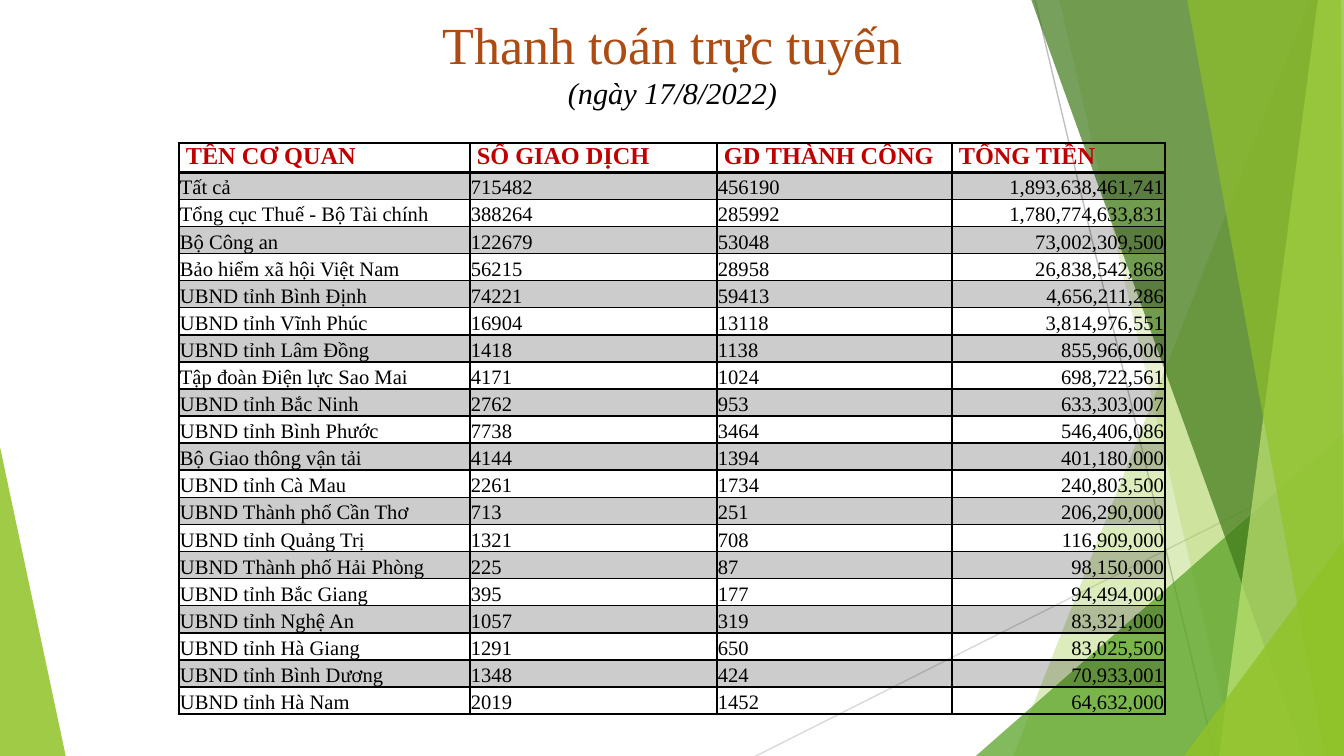
from dataclasses import dataclass

from lxml.etree import SubElement
from pptx import Presentation
from pptx.dml.color import RGBColor
from pptx.enum.shapes import MSO_CONNECTOR
from pptx.enum.text import MSO_ANCHOR, PP_ALIGN
from pptx.oxml.ns import qn
from pptx.util import Emu, Pt

EMU_PER_PX = 914400 / 134.4
FONT = "Times New Roman"
COLORS = {
    "lime": "90C226",
    "green": "54A021",
    "forest": "3F7819",
    "pale": "C0E474",
    "light_line": "D9D9D9",
    "gray_line": "BFBFBF",
    "title": "AD4C12",
    "header": "C00000",
    "black": "000000",
}


@dataclass(frozen=True)
class Facet:
    color: str
    opacity: int
    points: tuple[tuple[int, int], ...]


@dataclass(frozen=True)
class Ray:
    color: str
    start: tuple[int, int]
    end: tuple[int, int]


@dataclass(frozen=True)
class Agency:
    name: str
    transactions: str
    successful: str
    amount: str


LEFT_FACET = Facet("lime", 85, ((-1, 442), (66, 757), (-1, 756)))
RAYS = (
    Ray("light_line", (754, 757), (1345, 460)),
    Ray("gray_line", (1035, 0), (1215, 756)),
)
RIGHT_FACETS = (
    Facet("lime", 30, ((1310, 0), (1013, 757), (1347, 757), (1345, 1))),
    Facet("lime", 20, ((1059, -1), (1235, 756), (1345, 756), (1345, -1))),
    Facet("green", 72, ((976, 756), (1344, 433), (1345, 756))),
    Facet("forest", 70, ((1031, -1), (1304, 756), (1345, 756), (1345, -1))),
    Facet("pale", 70, ((1318, -1), (1219, 756), (1345, 756), (1344, -1))),
    Facet("lime", 65, ((1187, -1), (1325, 756), (1344, 756), (1341, -1))),
    Facet("lime", 80, ((1184, 756), (1345, 539), (1345, 756))),
)
COLUMN_WIDTHS = (291, 247, 235, 213)
TABLE_HEIGHT = 570
HEADINGS = ("TÊN CƠ QUAN", "SỐ GIAO DỊCH", "GD THÀNH CÔNG", "TỔNG TIỀN")
AGENCIES = (
    Agency("Tất cả", "715482", "456190", "1,893,638,461,741"),
    Agency("Tổng cục Thuế - Bộ Tài chính", "388264", "285992", "1,780,774,633,831"),
    Agency("Bộ Công an", "122679", "53048", "73,002,309,500"),
    Agency("Bảo hiểm xã hội Việt Nam", "56215", "28958", "26,838,542,868"),
    Agency("UBND tỉnh Bình Định", "74221", "59413", "4,656,211,286"),
    Agency("UBND tỉnh Vĩnh Phúc", "16904", "13118", "3,814,976,551"),
    Agency("UBND tỉnh Lâm Đồng", "1418", "1138", "855,966,000"),
    Agency("Tập đoàn Điện lực Sao Mai", "4171", "1024", "698,722,561"),
    Agency("UBND tỉnh Bắc Ninh", "2762", "953", "633,303,007"),
    Agency("UBND tỉnh Bình Phước", "7738", "3464", "546,406,086"),
    Agency("Bộ Giao thông vận tải", "4144", "1394", "401,180,000"),
    Agency("UBND tỉnh Cà Mau", "2261", "1734", "240,803,500"),
    Agency("UBND Thành phố Cần Thơ", "713", "251", "206,290,000"),
    Agency("UBND tỉnh Quảng Trị", "1321", "708", "116,909,000"),
    Agency("UBND Thành phố Hải Phòng", "225", "87", "98,150,000"),
    Agency("UBND tỉnh Bắc Giang", "395", "177", "94,494,000"),
    Agency("UBND tỉnh Nghệ An", "1057", "319", "83,321,000"),
    Agency("UBND tỉnh Hà Giang", "1291", "650", "83,025,500"),
    Agency("UBND tỉnh Bình Dương", "1348", "424", "70,933,001"),
    Agency("UBND tỉnh Hà Nam", "2019", "1452", "64,632,000"),
)


def px(length: int) -> Emu:
    return Emu(round(length * EMU_PER_PX))


def rgb(name: str) -> RGBColor:
    return RGBColor.from_string(COLORS[name])


def write(para, text: str, *, size: float, color: str = "black", bold: bool = False,
          italic: bool = False, align: PP_ALIGN = PP_ALIGN.LEFT) -> None:
    para.alignment = align
    span = para.add_run()
    span.text = text
    span.font.name = FONT
    span.font.size = Pt(size)
    span.font.bold = bold
    span.font.italic = italic
    span.font.color.rgb = rgb(color)


def fill_translucent(target, properties, color: str, opacity: int) -> None:
    target.fill.solid()
    target.fill.fore_color.rgb = rgb(color)
    tint = properties.find(qn("a:solidFill")).find(qn("a:srgbClr"))
    SubElement(tint, qn("a:alpha"), val=str(opacity * 1000))


def draw_facet(page, facet: Facet) -> None:
    builder = page.shapes.build_freeform(*facet.points[0], scale=EMU_PER_PX)
    builder.add_line_segments(facet.points[1:], close=True)
    shape = builder.convert_to_shape()
    shape.shadow.inherit = False
    shape.line.fill.background()
    fill_translucent(shape, shape.element.spPr, facet.color, facet.opacity)


def draw_ray(page, ray: Ray) -> None:
    ends = [px(length) for length in (*ray.start, *ray.end)]
    connector = page.shapes.add_connector(MSO_CONNECTOR.STRAIGHT, *ends)
    connector.line.color.rgb = rgb(ray.color)
    connector.line.width = Pt(0.75)
    SubElement(connector.element.spPr, qn("a:effectLst"))


def draw_title(page) -> None:
    box = page.shapes.add_textbox(px(241), 0, px(863), px(59))
    frame = box.text_frame
    frame.word_wrap = True
    frame.vertical_anchor = MSO_ANCHOR.TOP
    frame.margin_top = px(12)
    frame.margin_bottom = 0
    para = frame.paragraphs[0]
    write(para, "Thanh toán trực tuyến", size=27.9, color="title", align=PP_ALIGN.CENTER)
    para.add_line_break()
    write(para, "(ngày 17/8/2022)", size=16.2, italic=True, align=PP_ALIGN.CENTER)


def draw_borders(cell, top: int, bottom: int) -> None:
    properties = cell._tc.get_or_add_tcPr()
    for side, points in (("L", 1), ("R", 1), ("T", top), ("B", bottom)):
        border = SubElement(properties, qn(f"a:ln{side}"), w=str(Pt(points)))
        solid = SubElement(border, qn("a:solidFill"))
        SubElement(solid, qn("a:srgbClr"), val=COLORS["black"])


def set_margins(cell, side: int, top: int) -> None:
    cell.margin_left = cell.margin_right = px(side)
    cell.margin_top = px(top)
    cell.margin_bottom = 0


def draw_heading(cell, text: str) -> None:
    set_margins(cell, 7, 0)
    draw_borders(cell, 1, 2)
    cell.fill.background()
    write(cell.text_frame.paragraphs[0], text, size=13, color="header", bold=True,
          align=PP_ALIGN.JUSTIFY)


def draw_value(cell, text: str, row: int, align: PP_ALIGN) -> None:
    set_margins(cell, 1, 1)
    cell.vertical_anchor = MSO_ANCHOR.BOTTOM
    draw_borders(cell, 2 if row == 1 else 1, 1)
    if row % 2:
        fill_translucent(cell, cell._tc.tcPr, "black", 20)
    else:
        cell.fill.background()
    write(cell.text_frame.paragraphs[0], text, size=11, align=align)


def draw_table(page) -> None:
    row_count = len(AGENCIES) + 1
    table = page.shapes.add_table(row_count, len(HEADINGS), px(179), px(143),
                                  px(sum(COLUMN_WIDTHS)), px(TABLE_HEIGHT)).table
    table.first_row = table.horz_banding = False
    for column, width in zip(table.columns, COLUMN_WIDTHS):
        column.width = px(width)
    for row in table.rows:
        row.height = px(TABLE_HEIGHT) // row_count
    for column, heading in enumerate(HEADINGS):
        draw_heading(table.cell(0, column), heading)
    for row, agency in enumerate(AGENCIES, 1):
        values = (agency.name, agency.transactions, agency.successful, agency.amount)
        for column, value in enumerate(values):
            align = PP_ALIGN.RIGHT if column == 3 else PP_ALIGN.LEFT
            draw_value(table.cell(row, column), value, row, align)


def main() -> None:
    deck = Presentation()
    deck.slide_width, deck.slide_height = px(1344), px(756)
    page = deck.slides.add_slide(deck.slide_layouts[6])
    draw_facet(page, LEFT_FACET)
    for ray in RAYS:
        draw_ray(page, ray)
    for facet in RIGHT_FACETS:
        draw_facet(page, facet)
    draw_title(page)
    draw_table(page)
    deck.save("out.pptx")


if __name__ == "__main__":
    main()
